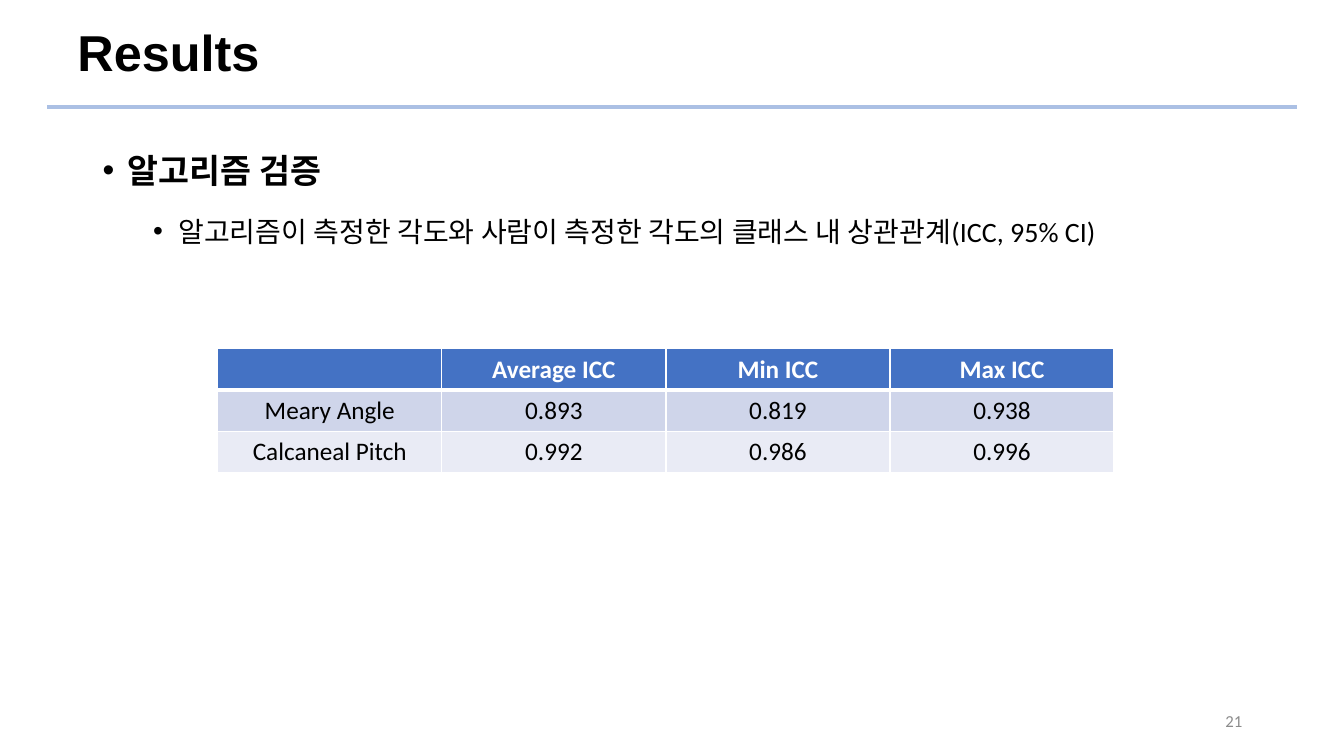
from dataclasses import dataclass

from lxml import etree
from pptx import Presentation
from pptx.dml.color import RGBColor
from pptx.enum.shapes import MSO_CONNECTOR
from pptx.enum.text import MSO_ANCHOR, PP_ALIGN
from pptx.oxml.ns import qn
from pptx.util import Inches, Pt

STRAIGHT = MSO_CONNECTOR.STRAIGHT
TOP, MIDDLE = MSO_ANCHOR.TOP, MSO_ANCHOR.MIDDLE
LEFT, CENTER, RIGHT = PP_ALIGN.LEFT, PP_ALIGN.CENTER, PP_ALIGN.RIGHT


@dataclass(frozen=True)
class Theme:
    heading_font: str = "Arial"
    body_font: str = "Calibri"
    ink: str = "000000"
    paper: str = "FFFFFF"
    rule: str = "ABC0E4"
    muted: str = "8C8C8C"
    header_fill: str = "4472C4"
    band_fills: tuple = ("CFD5EA", "E9EBF5")
    title_size: int = 36
    topic_size: int = 24
    detail_size: int = 20
    table_size: int = 18
    number_size: int = 12


class SlideBuilder:
    def __init__(self, page, theme):
        self.page = page
        self.theme = theme

    def rule(self, left, top, right, width):
        line = self.page.shapes.add_connector(
            STRAIGHT, Inches(left), Inches(top), Inches(right), Inches(top))
        line.line.color.rgb = RGBColor.from_string(self.theme.rule)
        line.line.width = Pt(width)
        etree.SubElement(line._element.spPr, qn("a:effectLst"))

    def box(self, left, top, width, height, anchor=TOP):
        frame = self.page.shapes.add_textbox(
            Inches(left), Inches(top), Inches(width), Inches(height)).text_frame
        frame.word_wrap = True
        frame.vertical_anchor = anchor
        return frame

    def add_span(self, para, text, size, font, color, bold=False, align=LEFT):
        para.alignment = align
        span = para.add_run()
        span.text = text
        span.font.size = Pt(size)
        span.font.name = font
        span.font.bold = bold
        span.font.color.rgb = RGBColor.from_string(color)

    def bullet(self, para, level, indent):
        para.level = level
        properties = para._p.get_or_add_pPr()
        properties.set("marL", str(Inches(indent)))
        properties.set("indent", str(Inches(-0.25)))
        etree.SubElement(properties, qn("a:buFont"), typeface="Arial")
        etree.SubElement(properties, qn("a:buChar"), char="•")
        para.line_spacing = 1.5

    def borders(self, cell, widths):
        properties = cell._tc.get_or_add_tcPr()
        for side, width in zip("LRTB", widths):
            line = etree.SubElement(properties, qn(f"a:ln{side}"), w=str(Pt(width)))
            fill = etree.SubElement(line, qn("a:solidFill"))
            etree.SubElement(fill, qn("a:srgbClr"), val=self.theme.paper)

    def table(self, left, top, width, row_height, rows):
        theme = self.theme
        grid = self.page.shapes.add_table(
            len(rows), len(rows[0]), Inches(left), Inches(top),
            Inches(width), Inches(row_height * len(rows))).table
        for row_index, values in enumerate(rows):
            header = row_index == 0
            fill = theme.header_fill if header else theme.band_fills[(row_index - 1) % 2]
            color = theme.paper if header else theme.ink
            widths = (1, 1, 3 if row_index == 1 else 1, 3 if header else 1)
            for column_index, value in enumerate(values):
                cell = grid.cell(row_index, column_index)
                cell.vertical_anchor = MIDDLE
                self.borders(cell, widths)
                cell.fill.solid()
                cell.fill.fore_color.rgb = RGBColor.from_string(fill)
                para = cell.text_frame.paragraphs[0]
                if value:
                    self.add_span(para, value, theme.table_size, theme.body_font,
                                  color, header, CENTER)
                else:
                    para.font.size = Pt(theme.table_size)


def main():
    deck = Presentation()
    deck.slide_width, deck.slide_height = Inches(13.33), Inches(7.5)
    theme = Theme()
    builder = SlideBuilder(deck.slides.add_slide(deck.slide_layouts[6]), theme)

    builder.rule(0.47, 1.06, 12.86, 3)

    title = builder.box(0.67, 0.22, 11.5, 0.65, MIDDLE).paragraphs[0]
    title.line_spacing = 0.9
    builder.add_span(title, "Results", theme.title_size, theme.heading_font, theme.ink, True)

    body = builder.box(0.92, 1.24, 11.5, 5.44)
    topic = body.paragraphs[0]
    builder.bullet(topic, 0, 0.25)
    builder.add_span(topic, "알고리즘 검증", theme.topic_size, theme.heading_font, theme.ink, True)
    detail = body.add_paragraph()
    builder.bullet(detail, 1, 0.75)
    detail.space_before = Pt(5)
    builder.add_span(detail, "알고리즘이 측정한 각도와 사람이 측정한 각도의 클래스 내 상관관계(ICC, 95% CI)",
                     theme.detail_size, theme.body_font, theme.ink)

    number = builder.box(9.42, 6.95, 3, 0.4, MIDDLE).paragraphs[0]
    builder.add_span(number, "21", theme.number_size, theme.body_font, theme.muted, align=RIGHT)

    builder.table(2.16, 3.46, 8.89, 0.41, [
        ("", "Average ICC", "Min ICC", "Max ICC"),
        ("Meary Angle", "0.893", "0.819", "0.938"),
        ("Calcaneal Pitch", "0.992", "0.986", "0.996"),
    ])

    deck.save("out.pptx")


if __name__ == "__main__":
    main()
